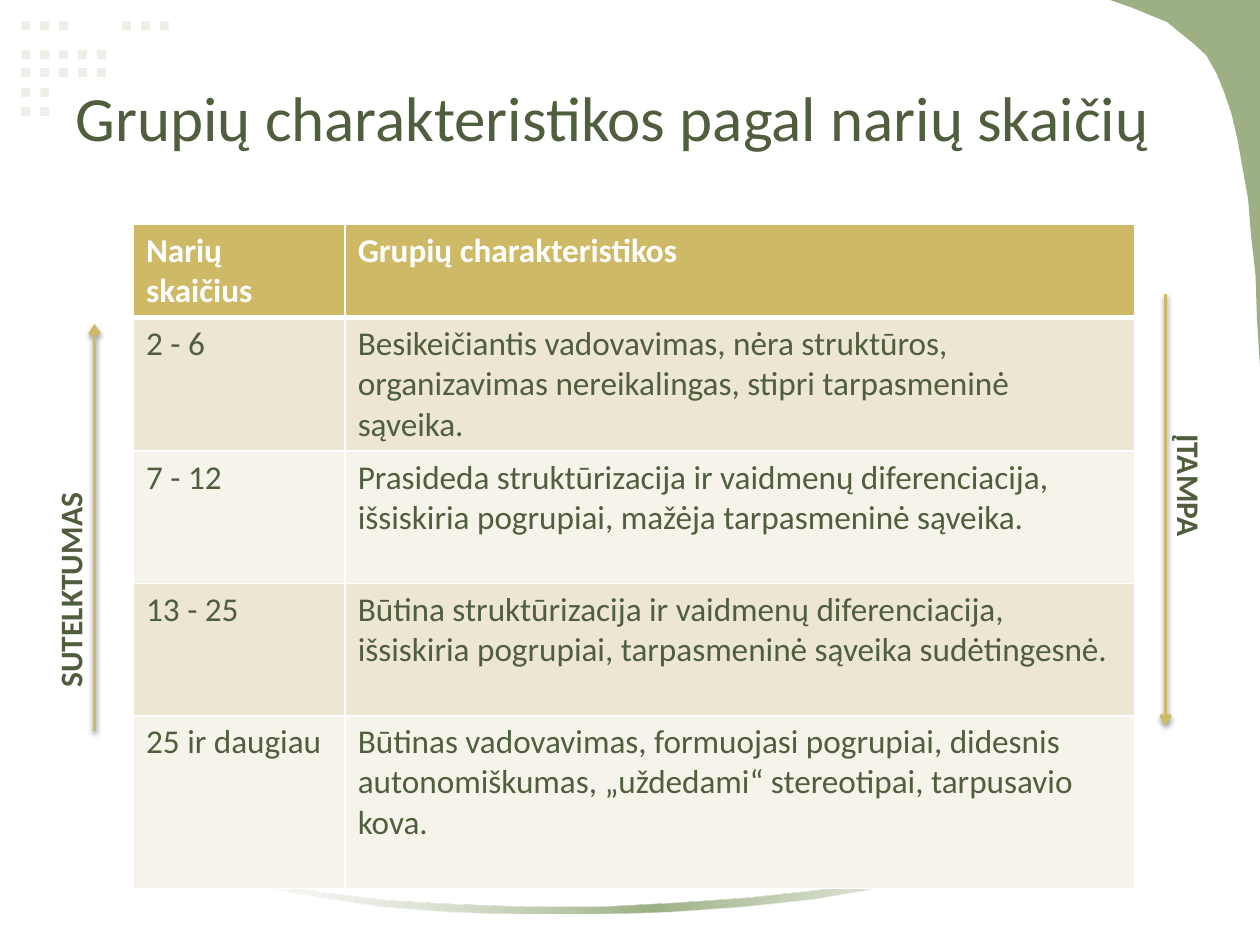
from dataclasses import dataclass

from pptx import Presentation, util as u
from pptx.dml.color import RGBColor
from pptx.enum import shapes, text
from pptx.oxml import parse_xml
from pptx.oxml.ns import nsdecls

CELL = u.Inches(0.05)


@dataclass(frozen=True)
class Theme:
    font: str = "Calibri"
    title_size: int = 36
    label_size: int = 18
    table_size: int = 19
    ink: str = "4F5E3C"
    paper: str = "FFFFFF"
    leaf: str = "9CB084"
    dot: str = "EBEFE6"
    gold: str = "CEB966"
    bands: tuple = ("EDE6D3", "F6F3EA")


@dataclass(frozen=True)
class Box:
    col: float
    row: float
    cols: float
    rows: float

    def emu(self):
        return [u.Emu(round(n * CELL)) for n in (self.col, self.row, self.cols, self.rows)]


THEME = Theme()

CORNER = [
    (0, 0), (100, 0), (100, 100), (98, 87), (97, 75), (94, 64), (92, 54), (88, 45),
    (85, 38), (81, 31), (76, 25), (71, 20), (64, 15), (56, 12), (47, 9), (38, 6),
    (26, 4), (14, 2),
]
SWOOSH = [
    (100, 0), (100, 7), (96.7, 25), (92.4, 42), (87, 57), (81, 69), (74.4, 79),
    (67.2, 88), (59.6, 94), (51.9, 98), (44, 100), (36.3, 100), (28.7, 98), (21.6, 94),
    (15.1, 87), (9.1, 79), (4, 69), (0, 57), (0, 54), (4.1, 66), (9.3, 75), (15.3, 83),
    (22, 89), (29.2, 92), (36.7, 94), (44.5, 94), (52.3, 91), (60.1, 87), (67.6, 81),
    (74.8, 72), (81.5, 62), (87.5, 50), (92.7, 35), (96.8, 19),
]
DOT_ROWS = [
    (0, (0, 1, 2, 5.33, 6.33, 7.33)),
    (4.6, range(5)),
    (7.4, range(5)),
    (10.6, range(2)),
    (13.6, range(2)),
]
GROUPS = [
    ("Narių skaičius", "Grupių charakteristikos"),
    ("2 - 6", "Besikeičiantis vadovavimas, nėra struktūros, organizavimas "
              "nereikalingas, stipri tarpasmeninė sąveika."),
    ("7 - 12", "Prasideda struktūrizacija ir vaidmenų diferenciacija, išsiskiria "
               "pogrupiai, mažėja tarpasmeninė sąveika."),
    ("13 - 25", "Būtina struktūrizacija ir vaidmenų diferenciacija, išsiskiria "
                "pogrupiai, tarpasmeninė sąveika sudėtingesnė."),
    ("25 ir daugiau", "Būtinas vadovavimas, formuojasi pogrupiai, didesnis "
                      "autonomiškumas, „uždedami“ stereotipai, tarpusavio kova."),
]


def rgb(value):
    return RGBColor.from_string(value)


def style(paragraph, size, color, bold=False):
    font = paragraph.font
    font.name, font.size, font.bold = THEME.font, u.Pt(size), bold
    font.color.rgb = rgb(color)


def paint(shape, color):
    shape.shadow.inherit = False
    shape.fill.solid()
    shape.fill.fore_color.rgb = rgb(color)
    shape.line.fill.background()


def add_dots(slide, box):
    for row, columns in DOT_ROWS:
        for column in columns:
            place = Box(box.col + 3 * column, box.row + row, 1.4, 1.4)
            paint(slide.shapes.add_shape(shapes.MSO_SHAPE.RECTANGLE, *place.emu()), THEME.dot)


def add_outline(slide, box, percents):
    left, top, width, height = box.emu()
    points = [(round(x * 10), round(y * 10)) for x, y in percents]
    builder = slide.shapes.build_freeform(*points[0], scale=(width / 1000, height / 1000))
    builder.add_line_segments(points[1:], close=True)
    outline = builder.convert_to_shape(left, top)
    paint(outline, THEME.leaf)
    return outline


def add_swoosh(slide, box):
    swoosh = add_outline(slide, box, SWOOSH)
    edge = f'<a:srgbClr val="{THEME.paper}"><a:alpha val="30000"/></a:srgbClr>'
    gradient = parse_xml(
        f'<a:gradFill {nsdecls("a")} rotWithShape="1"><a:gsLst>'
        f'<a:gs pos="0">{edge}</a:gs>'
        f'<a:gs pos="50000"><a:srgbClr val="{THEME.leaf}"/></a:gs>'
        f'<a:gs pos="100000">{edge}</a:gs>'
        '</a:gsLst><a:lin ang="0" scaled="0"/></a:gradFill>')
    properties = swoosh.element.spPr
    properties.replace(properties.solidFill, gradient)


def add_title(slide, box, wording):
    title = slide.shapes.title
    title.left, title.top, title.width, title.height = box.emu()
    frame = title.text_frame
    frame.text = wording
    frame.vertical_anchor = text.MSO_ANCHOR.MIDDLE
    frame.paragraphs[0].alignment = text.PP_ALIGN.LEFT
    style(frame.paragraphs[0], THEME.title_size, THEME.ink)
    slide.shapes.element.append(title.element)


def border_cell(cell, header):
    properties = cell._tc.get_or_add_tcPr()
    for side in "LRTB":
        width = u.Pt(3 if header and side == "B" else 1)
        properties.append(parse_xml(
            f'<a:ln{side} {nsdecls("a")} w="{width}"><a:solidFill>'
            f'<a:srgbClr val="{THEME.paper}"/></a:solidFill></a:ln{side}>'))


def add_groups(slide, box):
    table = slide.shapes.add_table(len(GROUPS), 2, *box.emu()).table
    for column, share in zip(table.columns, (33.6, box.cols - 33.6)):
        column.width = round(share * CELL)
    for row, share in zip(table.rows, (14.6, 21, 21, 21, 27.4)):
        row.height = round(share * CELL)
    for r, group in enumerate(GROUPS):
        header = r == 0
        for c, wording in enumerate(group):
            cell = table.cell(r, c)
            cell.text = wording
            style(cell.text_frame.paragraphs[0], THEME.table_size,
                  THEME.paper if header else THEME.ink, header)
            border_cell(cell, header)
            cell.fill.solid()
            cell.fill.fore_color.rgb = rgb(THEME.gold if header else THEME.bands[(r - 1) % 2])


def add_trend(slide, label_box, wording, rotation, column, start, end):
    label = slide.shapes.add_textbox(*label_box.emu())
    label.rotation = rotation
    label.text_frame.word_wrap = True
    label.text_frame.text = wording
    style(label.text_frame.paragraphs[0], THEME.label_size, THEME.ink, True)

    x, top, bottom = (round(n * CELL) for n in (column, start, end))
    arrow = slide.shapes.add_connector(shapes.MSO_CONNECTOR.STRAIGHT, x, top, x, bottom)
    arrow.line.color.rgb = rgb(THEME.gold)
    arrow.line.width = u.Pt(2)
    arrow.line._get_or_add_ln().append(parse_xml(f'<a:tailEnd {nsdecls("a")} type="arrow"/>'))
    arrow.element.spPr.append(parse_xml(
        f'<a:effectLst {nsdecls("a")}><a:outerShdw blurRad="{u.Pt(3.1)}" dist="{u.Pt(1.6)}" '
        'dir="5400000" rotWithShape="0"><a:srgbClr val="000000"><a:alpha val="38000"/>'
        '</a:srgbClr></a:outerShdw></a:effectLst>'))


def main():
    deck = Presentation()
    deck.slide_width, deck.slide_height = 200 * CELL, 150 * CELL
    slide = deck.slides.add_slide(deck.slide_layouts[5])
    add_dots(slide, Box(3.4, 3.4, 24, 15))
    add_outline(slide, Box(176.2, 0, 23.8, 58.2), CORNER)
    add_swoosh(slide, Box(28.4, 125, 150, 20))
    add_title(slide, Box(10, 6, 180, 25), "Grupių charakteristikos pagal narių skaičių")
    add_groups(slide, Box(21.2, 35.6, 159, 105))
    add_trend(slide, Box(175.4, 76.4, 26.8, 8), "ĮTAMPA", 90, 185, 46.6, 115.2)
    add_trend(slide, Box(-7, 89, 36.2, 8), "SUTELKTUMAS", 270, 15, 116, 51.4)
    deck.save("out.pptx")


if __name__ == "__main__":
    main()
